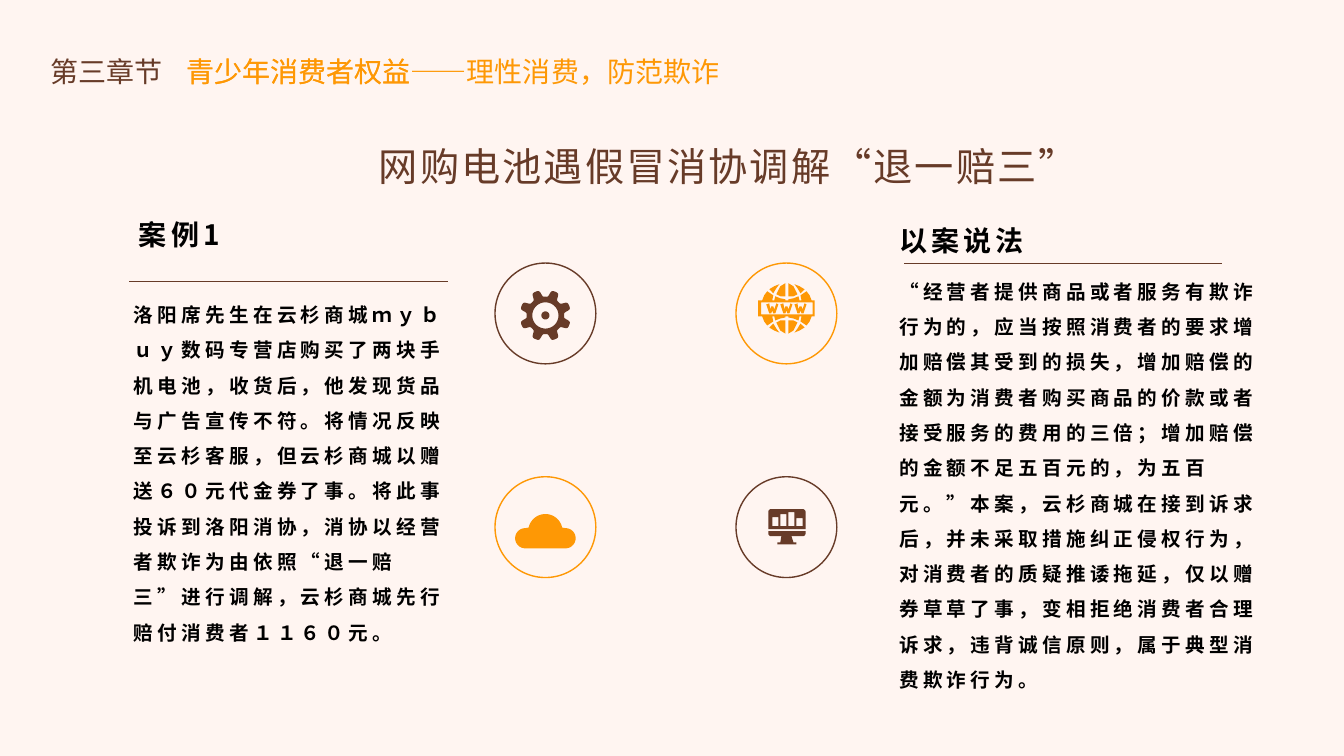
from math import cos, sin, tanh, radians

from lxml.etree import SubElement
from pptx import Presentation
from pptx.dml.color import RGBColor
from pptx.enum.shapes import MSO_CONNECTOR as Connector, MSO_SHAPE as Shape
from pptx.enum.text import MSO_AUTO_SIZE as AutoSize
from pptx.oxml.ns import qn
from pptx.util import Inches, Pt

FONT = "Noto Sans CJK SC"
BROWN, ORANGE, BLACK = "673B28", "FE9805", "000000"
CASE_TEXT = (
    "洛阳席先生在云杉商城ｍｙｂｕｙ数码专营店购买了两块手机电池，收货后，"
    "他发现货品与广告宣传不符。将情况反映至云杉客服，但云杉商城以赠送６０元代金券了事。"
    "将此事投诉到洛阳消协，消协以经营者欺诈为由依照“退一赔三”进行调解，"
    "云杉商城先行赔付消费者１１６０元。"
)
LAW_TEXT = (
    "“经营者提供商品或者服务有欺诈行为的，应当按照消费者的要求增加赔偿其受到的损失，"
    "增加赔偿的金额为消费者购买商品的价款或者接受服务的费用的三倍；"
    "增加赔偿的金额不足五百元的，为五百元。”本案，云杉商城在接到诉求后，"
    "并未采取措施纠正侵权行为，对消费者的质疑推诿拖延，仅以赠券草草了事，"
    "变相拒绝消费者合理诉求，违背诚信原则，属于典型消费欺诈行为。"
)


def colour(code):
    return RGBColor.from_string(code)


def add_text(page, text, left, top, width, height, size, code,
             bold=False, tracking=0, spacing=None):
    box = page.shapes.add_textbox(Inches(left), Inches(top), Inches(width), Inches(height))
    frame = box.text_frame
    frame.word_wrap = True
    frame.auto_size = AutoSize.NONE if spacing else AutoSize.SHAPE_TO_FIT_TEXT
    para = frame.paragraphs[0]
    para.text = text
    if spacing:
        para.line_spacing = spacing
    font = para.font
    font.size, font.bold, font.name = Pt(size), bold, FONT
    font.color.rgb = colour(code)
    # East Asian typeface and letter spacing
    props = para._p.pPr.find(qn("a:defRPr"))
    props.set("spc", str(int(tracking * 100)))
    SubElement(props, qn("a:ea")).set("typeface", FONT)


def add_rule(page, left, right, y):
    rule = page.shapes.add_connector(
        Connector.STRAIGHT, Inches(left), Inches(y), Inches(right), Inches(y))
    rule.line.color.rgb = colour(BROWN)
    rule.line.width = Pt(0.25)
    SubElement(rule._element.spPr, qn("a:effectLst"))


def add_ring(page, left, top, code):
    ring = page.shapes.add_shape(
        Shape.OVAL, Inches(left), Inches(top), Inches(1), Inches(1))
    ring.shadow.inherit = False
    ring.fill.background()
    ring.line.color.rgb = colour(code)
    ring.line.width = Pt(1)


def add_icon(page, contours, code):
    """Draw closed contours, in inches, as one filled outline."""
    paths = [[(Inches(x), Inches(y)) for x, y in contour] for contour in contours]
    builder = page.shapes.build_freeform(*paths[0][0])
    builder.add_line_segments(paths[0][1:], close=True)
    for path in paths[1:]:
        builder.move_to(*path[0])
        builder.add_line_segments(path[1:], close=True)
    icon = builder.convert_to_shape()
    icon.shadow.inherit = False
    icon.fill.solid()
    icon.fill.fore_color.rgb = colour(code)
    icon.line.fill.background()


def arc(x, y, radius, start=0, end=360, step=6):
    angles = [radians(angle) for angle in range(start, end + 1, step)]
    return [(x + radius * cos(a), y + radius * sin(a)) for a in angles]


def rectangle(left, top, right, bottom):
    return [(left, top), (right, top), (right, bottom), (left, bottom)]


def gear():
    x, y = 5.41, 3.13
    teeth = []
    for angle in range(0, 360, 2):
        a = radians(angle)
        radius = 0.22 - 0.035 * tanh(2.5 * cos(8 * a))
        teeth.append((x + radius * cos(a), y + radius * sin(a)))
    return [teeth, arc(x, y, 0.13), arc(x, y, 0.04)]


def globe():
    # Panels of the upper left quarter, mirrored to the other three
    quarter = [
        [(7.67, 2.91), (7.63, 2.87), (7.68, 2.84), (7.73, 2.82), (7.7, 2.86)],
        [(7.79, 2.81), (7.79, 2.94), (7.74, 2.94), (7.7, 2.92), (7.74, 2.84)],
        [(7.56, 2.98), (7.58, 2.93), (7.61, 2.89), (7.67, 2.93), (7.66, 2.98)],
        [(7.68, 2.98), (7.69, 2.94), (7.74, 2.96), (7.79, 2.97), (7.79, 2.98)],
    ]
    left = quarter + [[(x, 6.12 - y) for x, y in panel] for panel in quarter]
    right = [[(15.61 - x, y) for x, y in panel] for panel in left]
    # Banner with three letters
    banner = [rectangle(7.52, 2.98, 8.08, 3.14), rectangle(7.55, 3, 8.06, 3.12)]
    letter = [(0.03, 3.01), (0.04, 3.07), (0.05, 3.04), (0.07, 3.04), (0.08, 3.07),
              (0.1, 3.01), (0.12, 3.02), (0.09, 3.11), (0.07, 3.11), (0.06, 3.08),
              (0.05, 3.11), (0.03, 3.11), (0, 3.02)]
    letters = [[(7.6 + 0.14 * i + x, y) for x, y in letter] for i in range(3)]
    return left + right + banner + letters


def cloud():
    return [arc(5.21, 5.34, 0.1, 90, 270)
            + arc(5.41, 5.27, 0.17, 192, 348)
            + arc(5.61, 5.34, 0.1, 270, 450)]


def monitor():
    screen = (arc(7.65, 5.08, 0.03, 180, 270) + arc(7.96, 5.08, 0.03, 270, 360)
              + [(7.99, 5.25), (7.62, 5.25)])
    stand = ([(7.62, 5.27), (7.99, 5.27)] + arc(7.96, 5.29, 0.03, 0, 90)
             + [(7.85, 5.32), (7.87, 5.38), (7.9, 5.38), (7.9, 5.4),
                (7.71, 5.4), (7.71, 5.38), (7.74, 5.38), (7.75, 5.32)]
             + arc(7.65, 5.29, 0.03, 90, 180))
    bars = [rectangle(7.66 + 0.08 * i, top, 7.72 + 0.08 * i, 5.22)
            for i, top in enumerate((5.13, 5.1, 5.08, 5.14))]
    return [screen, stand] + bars


def main():
    deck = Presentation()
    deck.slide_width, deck.slide_height = Inches(13.33), Inches(7.5)
    page = deck.slides.add_slide(deck.slide_layouts[6])
    page.background.fill.solid()
    page.background.fill.fore_color.rgb = colour("FFF5F1")

    # Chapter heading, its first half overprinted for weight
    add_text(page, "第三章节", 0.4, 0.49, 1.37, 0.44, 20, BROWN)
    add_text(page, "青少年消费者权益", 1.75, 0.49, 3.88, 0.44, 20, ORANGE)
    add_text(page, "青少年消费者权益——理性消费，防范欺诈", 1.75, 0.49, 7, 0.44, 20, ORANGE)

    # Title
    add_text(page, "网购电池遇假冒消协调解“退一赔三”", 3.66, 1.36, 7.57, 0.57,
             28, BROWN, tracking=1.5)

    # Ringed icons
    for left, top, contours, code in (
        (4.91, 2.61, gear(), BROWN),
        (7.3, 2.61, globe(), ORANGE),
        (4.91, 4.73, cloud(), ORANGE),
        (7.3, 4.73, monitor(), BROWN),
    ):
        add_ring(page, left, top, code)
        add_icon(page, contours, code)

    # Case on the left, legal comment on the right
    add_text(page, "案例1", 1.28, 2.11, 1.49, 0.44, 20, BLACK, True, 3)
    add_rule(page, 1.28, 4.44, 2.79)
    add_text(page, CASE_TEXT, 1.23, 2.84, 3.45, 3.83, 14, BLACK, True, 3, 1.5)
    add_text(page, "以案说法", 8.82, 2.17, 1.49, 0.44, 20, BLACK, True, 3)
    add_rule(page, 8.97, 12.12, 2.61)
    add_text(page, LAW_TEXT, 8.82, 2.61, 3.89, 4.23, 14, BLACK, True, 3, 1.5)

    deck.save("out.pptx")


if __name__ == "__main__":
    main()
